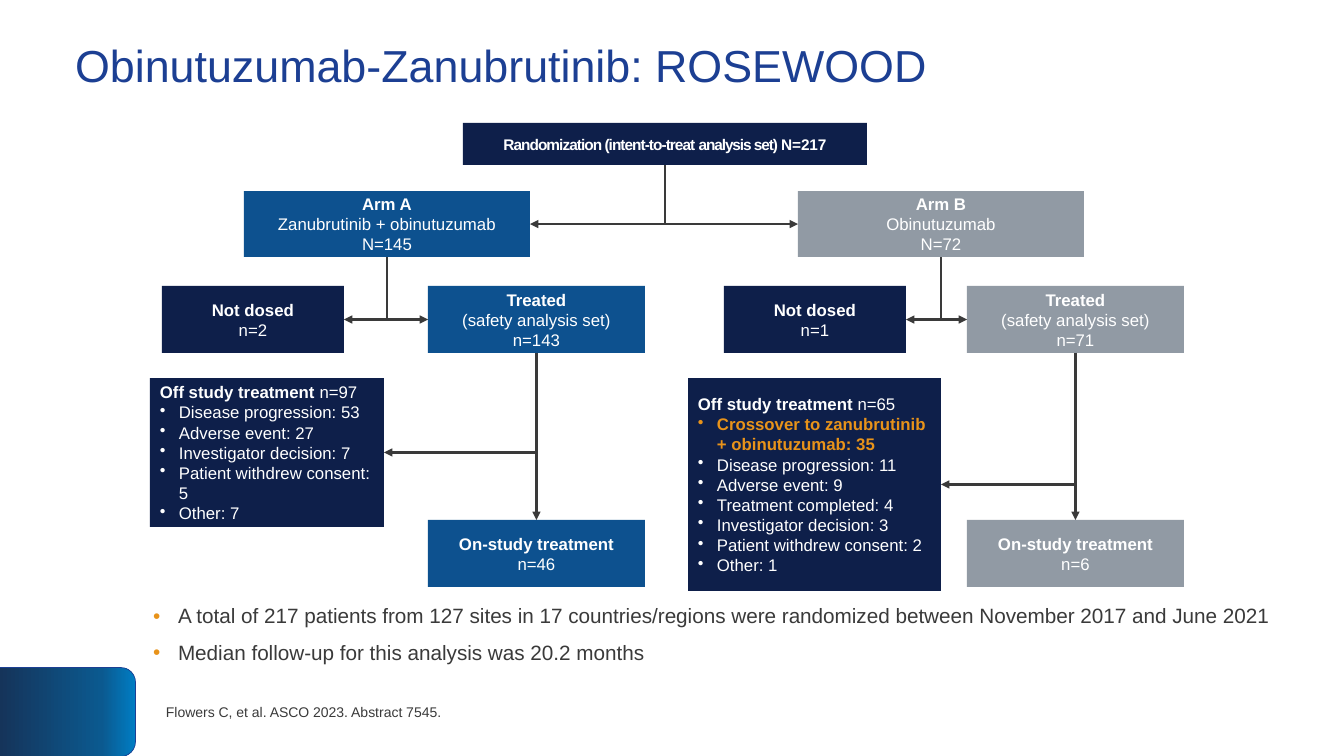
from dataclasses import dataclass

from lxml.etree import SubElement
from pptx import Presentation
from pptx.dml.color import RGBColor
from pptx.enum.shapes import MSO_CONNECTOR as CONNECTOR, MSO_SHAPE as SHAPE
from pptx.enum.text import MSO_ANCHOR as ANCHOR, MSO_AUTO_SIZE as AUTO_SIZE, PP_ALIGN as ALIGN
from pptx.oxml import parse_xml
from pptx.oxml.ns import nsdecls, qn
from pptx.util import Pt

EMU_PER_PX = 914400 / 100.8


@dataclass(frozen=True)
class Theme:
    font: str = "Arial"
    title: str = "1C3F93"
    ink: str = "3A3A3A"
    white: str = "FFFFFF"
    accent: str = "E8931A"
    navy: str = "0E1F4A"
    blue: str = "0D518F"
    grey: str = "919AA4"
    corner: tuple = ((0, "007DC3"), (25, "0B598F"), (100, "15345A"))
    title_size: float = 32
    body_size: float = 14.8
    node_size: float = 12
    root_size: float = 11
    source_size: float = 10
    line_width: float = 1.5


@dataclass(frozen=True)
class Arm:
    name: str
    drugs: str
    total: int
    not_dosed: int
    treated: int
    on_study: int
    off_study: int
    reasons: tuple
    color: str
    arm_x: int
    not_dosed_x: int
    treated_x: int
    off_study_box: tuple
    crossover: str = ""


THEME = Theme()
ARMS = (
    Arm("Arm A", "Zanubrutinib + obinutuzumab", 145, 2, 143, 46, 97,
        ("Disease progression: 53", "Adverse event: 27", "Investigator decision: 7",
         "Patient withdrew consent: 5", "Other: 7"),
        THEME.blue, 244, 162, 428, (150, 378, 234, 149)),
    Arm("Arm B", "Obinutuzumab", 72, 1, 71, 6, 65,
        ("Disease progression: 11", "Adverse event: 9", "Treatment completed: 4",
         "Investigator decision: 3", "Patient withdrew consent: 2", "Other: 1"),
        THEME.grey, 798, 724, 967, (688, 378, 253, 213),
        "Crossover to zanubrutinib + obinutuzumab: 35"),
)
FINDINGS = (
    "A total of 217 patients from 127 sites in 17 countries/regions were randomized "
    "between November 2017 and June 2021",
    "Median follow-up for this analysis was 20.2 months",
)


def px(*lengths):
    return [round(length * EMU_PER_PX) for length in lengths]


def place(shape, box):
    shape.left, shape.top, shape.width, shape.height = px(*box)


def style_runs(paragraph, size, color, bold=False):
    for run in paragraph.runs:
        run.font.name = THEME.font
        run.font.size = Pt(size)
        run.font.bold = bold
        run.font.color.rgb = RGBColor.from_string(color)


def add_bullet(paragraph, indent, color):
    """Give the paragraph a hanging round bullet; indent is in px."""
    props = paragraph._p.get_or_add_pPr()
    margin, = px(indent)
    props.set("marL", str(margin))
    props.set("indent", str(-margin))
    SubElement(SubElement(props, qn("a:buClr")), qn("a:srgbClr")).set("val", color)
    SubElement(props, qn("a:buChar")).set("char", "•")


def add_box(slide, box, fill):
    shape = slide.shapes.add_shape(SHAPE.RECTANGLE, *px(*box))
    shape.shadow.inherit = False
    shape.fill.solid()
    shape.fill.fore_color.rgb = RGBColor.from_string(fill)
    shape.line.fill.background()
    shape.text_frame.word_wrap = True
    shape.text_frame.vertical_anchor = ANCHOR.MIDDLE
    return shape


def add_node(slide, box, fill, *lines):
    """Add a centred box whose first line is bold."""
    node = add_box(slide, box, fill)
    node.text_frame.text = "\n".join(lines)
    for index, paragraph in enumerate(node.text_frame.paragraphs):
        paragraph.alignment = ALIGN.CENTER
        style_runs(paragraph, THEME.node_size, THEME.white, bold=index == 0)
    return node


def add_root(slide):
    root = add_box(slide, (463, 123, 404, 42), THEME.navy)
    label = root.text_frame.paragraphs[0]
    label.alignment = ALIGN.CENTER
    for text, tracking in (("Randomization (intent-to-treat ", -70),
                           ("analysis set) ", -80), ("N=217", -10)):
        run = label.add_run()
        run.text = text
        run.font._element.set("spc", str(tracking))
    style_runs(label, THEME.root_size, THEME.white, bold=True)
    return root


def add_off_study(slide, arm):
    node = add_box(slide, arm.off_study_box, THEME.navy)
    heading = node.text_frame.paragraphs[0]
    heading.text = "Off study treatment "
    heading.alignment = ALIGN.LEFT
    style_runs(heading, THEME.node_size, THEME.white, bold=True)
    count = heading.add_run()
    count.text = f"n={arm.off_study}"
    count.font.name = THEME.font
    count.font.size = Pt(THEME.node_size)
    count.font.color.rgb = RGBColor.from_string(THEME.white)
    crossover = (arm.crossover,) if arm.crossover else ()
    for reason in crossover + arm.reasons:
        highlighted = reason == arm.crossover
        color = THEME.accent if highlighted else THEME.white
        item = node.text_frame.add_paragraph()
        item.text = reason
        item.alignment = ALIGN.LEFT
        add_bullet(item, 19, color)
        style_runs(item, THEME.node_size, color, bold=highlighted)
    return node


def style_arrow(arrow):
    arrow.line.color.rgb = RGBColor.from_string(THEME.ink)
    arrow.line.width = Pt(THEME.line_width)
    SubElement(arrow.line._get_or_add_ln(), qn("a:tailEnd")).set("type", "triangle")
    SubElement(arrow._element.spPr, qn("a:effectLst"))


def add_elbow(slide, source, target):
    """Run an arrow down from source, then sideways into target."""
    x1, y1 = source.left + source.width // 2, source.top + source.height
    leftward = target.left < x1
    x2 = target.left + target.width if leftward else target.left
    y2 = target.top + target.height // 2
    drop, reach = y2 - y1, abs(x2 - x1)
    # The one-bend preset runs sideways first, so it is laid out on its side and turned.
    left, top = (x1 + x2 - drop) // 2, (y1 + y2 - reach) // 2
    begin, end = (left, left + drop) if leftward else (left + drop, left)
    arrow = slide.shapes.add_connector(CONNECTOR.ELBOW, begin, top, end, top + reach)
    props = arrow._element.spPr
    props.find(qn("a:prstGeom")).set("prst", "bentConnector2")
    props.find(qn("a:xfrm")).set("rot", str((90 if leftward else 270) * 60000))
    style_arrow(arrow)


def add_drop(slide, source, target):
    arrow = slide.shapes.add_connector(CONNECTOR.STRAIGHT, 0, 0, 0, 0)
    arrow.begin_connect(source, 2)
    arrow.end_connect(target, 0)
    style_arrow(arrow)


def add_arm(slide, root, arm):
    head = add_node(slide, (arm.arm_x, 191, 286, 66), arm.color,
                    arm.name, arm.drugs, f"N={arm.total}")
    not_dosed = add_node(slide, (arm.not_dosed_x, 286, 182, 67), THEME.navy,
                         "Not dosed", f"n={arm.not_dosed}")
    treated = add_node(slide, (arm.treated_x, 286, 217, 67), arm.color,
                       "Treated", "(safety analysis set)", f"n={arm.treated}")
    on_study = add_node(slide, (arm.treated_x, 520, 217, 67), arm.color,
                        "On-study treatment", f"n={arm.on_study}")
    off_study = add_off_study(slide, arm)
    for source, target in ((root, head), (head, not_dosed), (head, treated),
                           (treated, off_study)):
        add_elbow(slide, source, target)
    add_drop(slide, treated, on_study)


def add_corner(slide):
    corner = slide.shapes.add_shape(SHAPE.ROUND_2_SAME_RECTANGLE, *px(23, 644, 89, 136))
    corner.rotation = 90
    corner.shadow.inherit = False
    corner.line.color.rgb = RGBColor.from_string(THEME.title)
    corner.line.width = Pt(0.5)
    stops = "".join(f'<a:gs pos="{stop * 1000}"><a:srgbClr val="{color}"/></a:gs>'
                    for stop, color in THEME.corner)
    corner._element.spPr.find(qn("a:prstGeom")).addnext(parse_xml(
        f'<a:gradFill {nsdecls("a")} rotWithShape="1"><a:gsLst>{stops}</a:gsLst>'
        '<a:lin ang="5400000" scaled="0"/></a:gradFill>'))


def fill_title(title):
    place(title, (65, 24, 1159, 88))
    frame = title.text_frame
    frame.text = "Obinutuzumab-Zanubrutinib: ROSEWOOD"
    frame.auto_size = AUTO_SIZE.NONE
    frame.vertical_anchor = ANCHOR.MIDDLE
    frame.paragraphs[0].alignment = ALIGN.LEFT
    frame.paragraphs[0].line_spacing = 0.9
    style_runs(frame.paragraphs[0], THEME.title_size, THEME.title)


def fill_findings(body):
    place(body, (143, 601, 1162, 70))
    body.text_frame.text = "\n".join(FINDINGS)
    body.text_frame.auto_size = AUTO_SIZE.NONE
    for index, finding in enumerate(body.text_frame.paragraphs):
        add_bullet(finding, 25, THEME.accent)
        finding.line_spacing = 0.9
        finding.space_before = Pt(10 if index else 0)
        style_runs(finding, THEME.body_size, THEME.ink)


def add_source(slide):
    frame = slide.shapes.add_textbox(*px(156, 667, 1174, 89)).text_frame
    frame.text = "Flowers C, et al. ASCO 2023. Abstract 7545."
    frame.word_wrap = True
    frame.vertical_anchor = ANCHOR.MIDDLE
    style_runs(frame.paragraphs[0], THEME.source_size, THEME.ink)


def main():
    deck = Presentation()
    deck.slide_width, deck.slide_height = px(1344, 756)
    slide = deck.slides.add_slide(deck.slide_layouts[1])
    add_corner(slide)
    fill_title(slide.shapes.title)
    fill_findings(slide.placeholders[1])
    root = add_root(slide)
    for arm in ARMS:
        add_arm(slide, root, arm)
    add_source(slide)
    deck.save("out.pptx")


if __name__ == "__main__":
    main()
